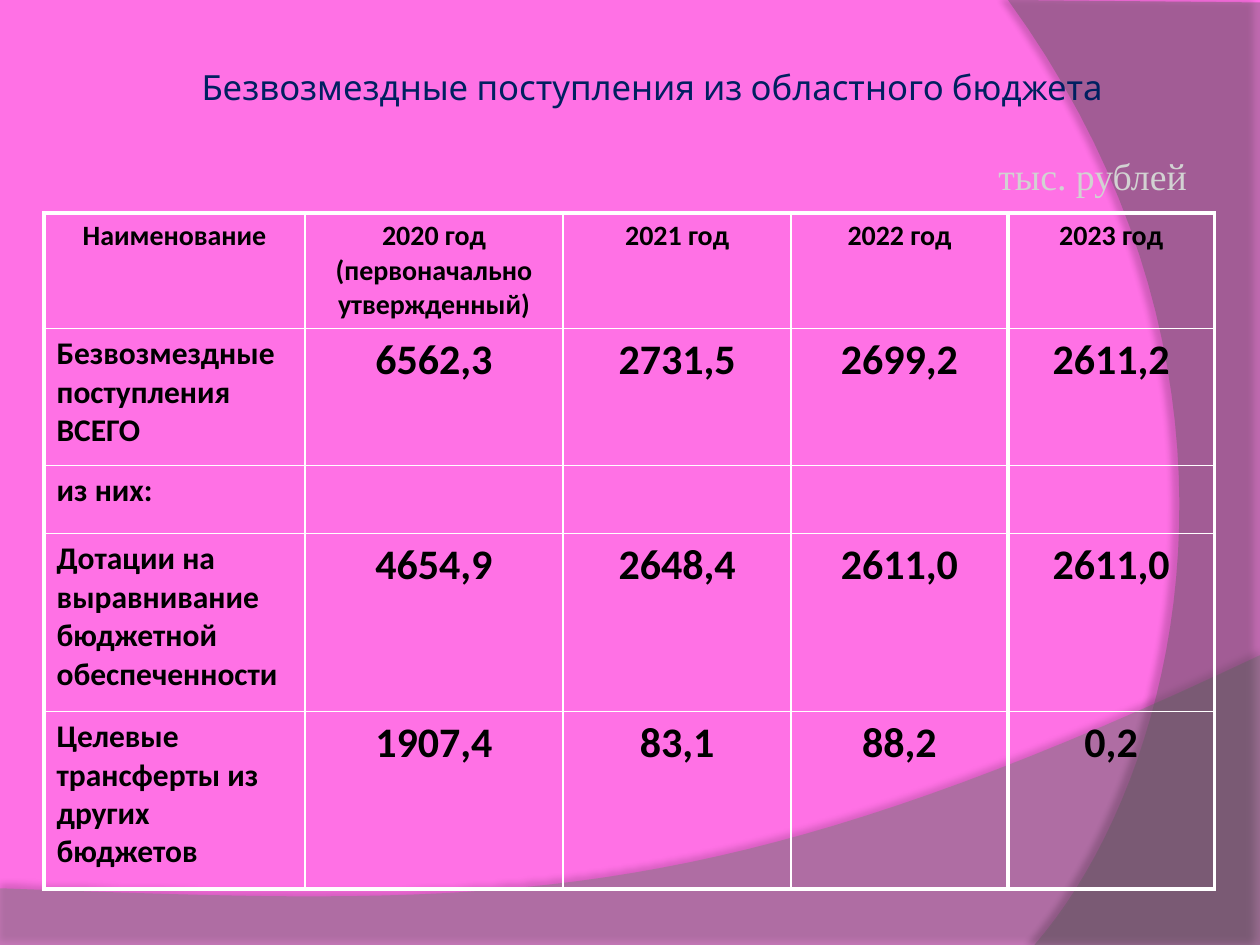
import pptx
import pptx.dml.color
import pptx.enum.text
import pptx.oxml.ns
import pptx.util
from lxml import etree

Inches = pptx.util.Inches
Pt = pptx.util.Pt
RGBColor = pptx.dml.color.RGBColor
Align = pptx.enum.text.PP_ALIGN
Anchor = pptx.enum.text.MSO_ANCHOR
qn = pptx.oxml.ns.qn

PINK = RGBColor(0xFF, 0x71, 0xE5)
WAVE_GREY = RGBColor(0x7F, 0x7F, 0x7F)
ARC_GREY = RGBColor(0x5E, 0x5E, 0x5E)
NAVY = RGBColor(0x00, 0x20, 0x60)
LIGHT_GREY = RGBColor(0xD2, 0xD2, 0xD2)
BLACK = RGBColor(0, 0, 0)
WHITE = RGBColor(0xFF, 0xFF, 0xFF)

THICK, THIN = 2.25, 1
COLUMN_WIDTHS = [2.07, 2.05, 1.81, 1.72, 1.64]
ROW_HEIGHTS = [0.89, 1.09, 0.54, 1.41, 1.41]
ROWS = [
    ["Наименование", "2020 год (первоначально утвержденный)", "2021 год", "2022 год", "2023 год"],
    ["Безвозмездные поступления ВСЕГО", "6562,3", "2731,5", "2699,2", "2611,2"],
    ["из них:", "", "", "", ""],
    ["Дотации на выравнивание бюджетной обеспеченности", "4654,9", "2648,4", "2611,0", "2611,0"],
    ["Целевые трансферты из других бюджетов", "1907,4", "83,1", "88,2", "0,2"],
]


def curve_points(start, control_1, control_2, end, steps=40):
    """Points along a cubic curve, without its start."""
    points = []
    for step in range(1, steps + 1):
        t = step / steps
        weights = ((1 - t) ** 3, 3 * t * (1 - t) ** 2, 3 * t * t * (1 - t), t ** 3)
        corners = (start, control_1, control_2, end)
        points.append(tuple(sum(w * c[axis] for w, c in zip(weights, corners)) for axis in (0, 1)))
    return points


def add_backdrop_shape(slide, points, color, opacity, shadow_opacity, distance, direction):
    """Translucent outline with a soft shadow; opacities in percent, direction in degrees."""
    corners = [(Inches(x), Inches(y)) for x, y in points]
    builder = slide.shapes.build_freeform(*corners[0])
    builder.add_line_segments(corners[1:], close=True)
    shape = builder.convert_to_shape()
    shape.line.fill.background()
    shape.fill.solid()
    shape.fill.fore_color.rgb = color
    properties = shape.fill._xPr
    fill_color = properties.find(qn("a:solidFill")).find(qn("a:srgbClr"))
    etree.SubElement(fill_color, qn("a:alpha"), val=str(opacity * 1000))
    shape.shadow.inherit = False
    shadow = etree.SubElement(
        properties.find(qn("a:effectLst")), qn("a:outerShdw"),
        blurRad=str(Pt(4)), dist=str(Pt(distance)), dir=str(direction * 60000),
        algn="ctr", rotWithShape="0")
    shadow_color = etree.SubElement(shadow, qn("a:srgbClr"), val=str(BLACK))
    etree.SubElement(shadow_color, qn("a:alpha"), val=str(shadow_opacity * 1000))


def add_backdrop(slide):
    slide.background.fill.solid()
    slide.background.fill.fore_color.rgb = PINK
    wave = [(0, 7.05), (0, 7.51), (10, 7.51), (10, 5.2)]
    wave += curve_points((10, 5.2), (5.59, 7.29), (3.91, 7.19), (0, 7.05))
    add_backdrop_shape(slide, wave, WAVE_GREY, 45, 35, 3.5, 270)
    arc = [(10, 0.02), (10, 7.5), (8.21, 7.5)]
    arc += curve_points((8.21, 7.5), (9.35, 6.19), (10.18, 3), (8, 0))
    add_backdrop_shape(slide, arc, ARC_GREY, 40, 45, 4, 180)


def add_run(paragraph, text, size, font, color, bold=False):
    run = paragraph.add_run()
    run.text = text
    run.font.size = Pt(size)
    run.font.name = font
    run.font.color.rgb = color
    run.font.bold = bold


def add_label(slide, left, top, width, height, text, size, font, color, alignment):
    box = slide.shapes.add_textbox(Inches(left), Inches(top), Inches(width), Inches(height))
    frame = box.text_frame
    frame.word_wrap = True
    frame.vertical_anchor = Anchor.MIDDLE
    frame.margin_left = frame.margin_right = Inches(0.05)
    frame.margin_top = frame.margin_bottom = Inches(0.05)
    paragraph = frame.paragraphs[0]
    paragraph.alignment = alignment
    add_run(paragraph, text, size, font, color)


def set_borders(cell, left, right, top, bottom):
    properties = cell._tc.get_or_add_tcPr()
    for side, width in (("L", left), ("R", right), ("T", top), ("B", bottom)):
        line = etree.SubElement(properties, qn(f"a:ln{side}"), w=str(Pt(width)))
        fill = etree.SubElement(line, qn("a:solidFill"))
        etree.SubElement(fill, qn("a:srgbClr"), val=str(WHITE))


def add_revenue_table(slide, left, top):
    frame = slide.shapes.add_table(
        len(ROWS), len(COLUMN_WIDTHS), Inches(left), Inches(top),
        Inches(sum(COLUMN_WIDTHS)), Inches(sum(ROW_HEIGHTS)))
    table = frame.table
    table.first_row = table.horz_banding = False
    for column, width in zip(table.columns, COLUMN_WIDTHS):
        column.width = Inches(width)
    for row, height in zip(table.rows, ROW_HEIGHTS):
        row.height = Inches(height)

    last_row, last_column = len(ROWS) - 1, len(COLUMN_WIDTHS) - 1
    for r, texts in enumerate(ROWS):
        for c, text in enumerate(texts):
            cell = table.cell(r, c)
            set_borders(
                cell,
                left=THICK if c in (0, last_column) else THIN,
                right=THICK if c >= last_column - 1 else THIN,
                top=THICK if r == 0 else THIN,
                bottom=THICK if r == last_row else THIN)
            cell.fill.background()
            if not text:
                continue
            size = 16 if r == 0 else 18 if c == 0 else 24
            paragraph = cell.text_frame.paragraphs[0]
            paragraph.alignment = Align.LEFT if r and c == 0 else Align.CENTER
            add_run(paragraph, text, size, "Calibri", BLACK, bold=True)


def main():
    presentation = pptx.Presentation()
    presentation.slide_width = Inches(10)
    presentation.slide_height = Inches(7.5)
    slide = presentation.slides.add_slide(presentation.slide_layouts[6])
    add_backdrop(slide)
    add_revenue_table(slide, 0.35, 1.69)
    add_label(slide, 0.35, 0.39, 9.65, 0.6, "Безвозмездные поступления из областного бюджета",
              19.8, "Karla", NAVY, Align.CENTER)
    add_label(slide, 7.47, 1.14, 2, 0.5, "тыс. рублей",
              21.6, "Times New Roman", LIGHT_GREY, Align.RIGHT)
    presentation.save("out.pptx")


if __name__ == "__main__":
    main()
